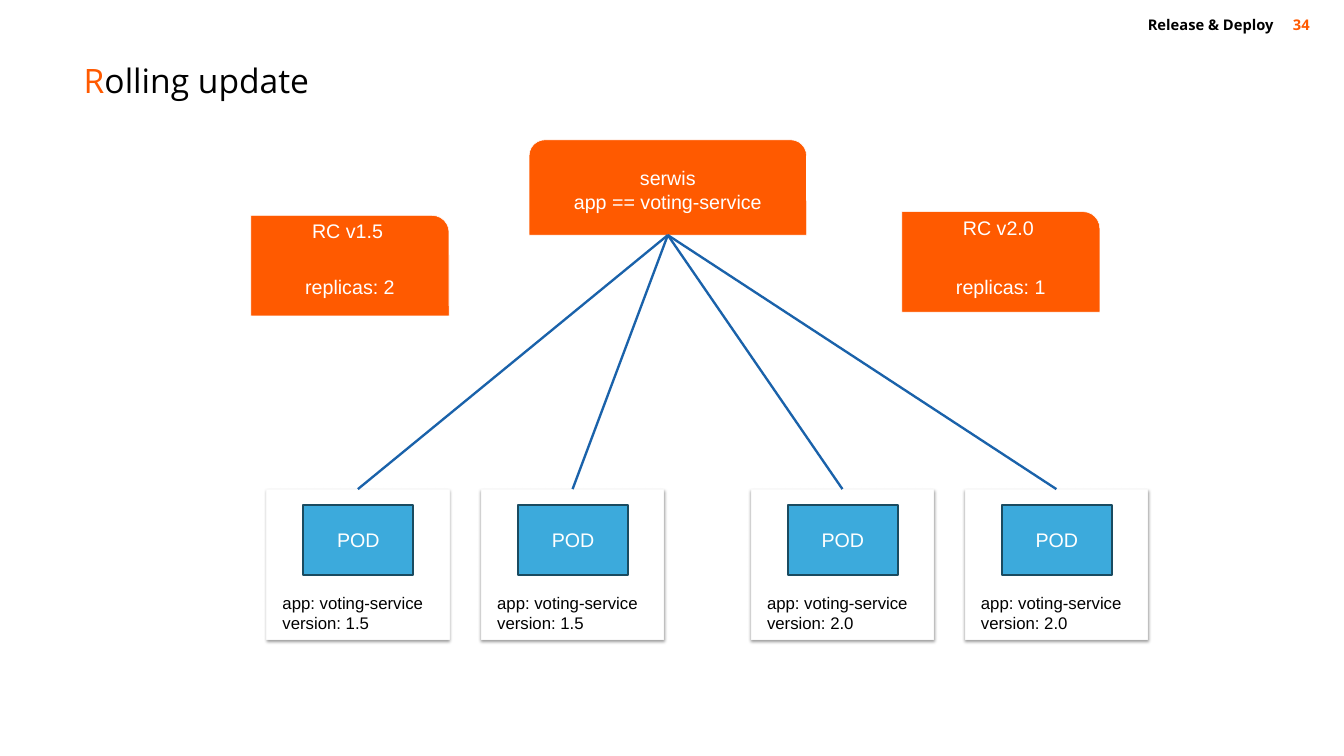
from lxml.etree import SubElement
from pptx import Presentation
from pptx.dml.color import RGBColor as RGB
from pptx.enum.shapes import MSO_CONNECTOR as LINE, MSO_SHAPE as FORM
from pptx.enum.text import MSO_ANCHOR as ANCHOR, MSO_AUTO_SIZE as AUTO, PP_ALIGN as ALIGN
from pptx.oxml import parse_xml
from pptx.oxml.ns import nsdecls, qn
from pptx.util import Inches, Pt

WIDE, HIGH = 17.78, 10
ORANGE = RGB(0xFF, 0x5A, 0x00)
WHITE = RGB(0xFF, 0xFF, 0xFF)
BLACK = RGB(0x00, 0x00, 0x00)
PALE = RGB(0xF9, 0xF9, 0xF9)
SKY = RGB(0x3C, 0xAA, 0xDC)
TEAL = RGB(0x1A, 0x4B, 0x60)
BLUE = RGB(0x1A, 0x62, 0xAA)

LABEL = dict(size=Pt(18.7), name="Arial", color=WHITE)
NOTE = dict(size=Pt(16), name="Arial", color=BLACK)
HEAD = dict(size=Pt(14), name="Open Sans", bold=True)
TITLE = dict(size=Pt(32), name="Open Sans", bold=False)

PODS = [(3.53, "1.5"), (6.37, "1.5"), (9.94, "2.0"), (12.77, "2.0")]
SETS = [((3.32, 2.85, 2.62, 1.33), "1.5", 2, 0.55),
        ((11.93, 2.8, 2.62, 1.33), "2.0", 1, 0.59)]
HUB = (7, 1.85, 3.67, 1.26)
SHADE = f"""<a:effectLst {nsdecls('a')}>
<a:outerShdw blurRad="{Pt(3.1)}" dist="{Pt(1.6)}" dir="5400000" rotWithShape="0">
<a:srgbClr val="000000"><a:alpha val="38000"/></a:srgbClr>
</a:outerShdw></a:effectLst>"""


def part(box, x, y, w, h):
    left, top, wide, high = box
    return left + x * wide, top + y * high, w * wide, h * high


def style(font, form):
    for key, value in form.items():
        if key == "color":
            font.color.rgb = value
        else:
            setattr(font, key, value)


def write(shape, lines, form, align=ALIGN.CENTER, anchor=ANCHOR.MIDDLE, pad=None):
    frame = shape.text_frame
    frame.word_wrap = True
    frame.auto_size = AUTO.NONE
    frame.vertical_anchor = anchor
    if pad is not None:
        for side in ("left", "right", "top", "bottom"):
            setattr(frame, f"margin_{side}", Inches(pad))
    for i, line in enumerate(lines):
        para = frame.add_paragraph() if i else frame.paragraphs[0]
        para.alignment = align
        for words, more in line if isinstance(line, list) else [(line, {})]:
            run = para.add_run()
            run.text = words
            style(run.font, form | more)


def block(host, form, box, fill, edge, width):
    shape = host.add_shape(form, *map(Inches, box))
    shape.shadow.inherit = False
    shape.fill.solid()
    shape.fill.fore_color.rgb = fill
    shape.line.color.rgb = edge
    shape.line.width = Pt(width)
    return shape


def label(host, box, *args, **more):
    write(host.add_textbox(*map(Inches, box)), *args, **more)


def header(slide, box):
    host = slide.shapes
    label(host, part(box, 0.95, 0.1, 0.03, 0.23), ["34"],
          HEAD | dict(color=ORANGE), align=ALIGN.RIGHT)
    label(host, part(box, 0.67, 0.1, 0.28, 0.23), ["Release & Deploy"],
          HEAD | dict(color=BLACK), align=ALIGN.RIGHT, pad=0.04)
    title = host.title
    spot = part(box, 0.06, 0.5, 0.88, 0.41)
    for key, value in zip(("left", "top", "width", "height"), spot):
        setattr(title, key, Inches(value))
    write(title, [[("R", dict(color=ORANGE)), ("olling update", dict(color=BLACK))]],
          TITLE, align=ALIGN.LEFT, pad=0.04)


def hub(slide, box):
    shape = block(slide.shapes, FORM.ROUND_2_SAME_RECTANGLE, box, ORANGE, WHITE, 0.5)
    write(shape, ["serwis", "app == voting-service"], LABEL)


def control(slide, box, version, count, row):
    host = slide.shapes
    shape = block(host, FORM.ROUND_1_RECTANGLE, box, ORANGE, WHITE, 0.5)
    write(shape, [f"RC v{version}"], LABEL, anchor=ANCHOR.TOP)
    label(host, part(box, 0.04, row, 0.92, 0.32), [f"replicas: {count}"], LABEL)


def pod(slide, box, version):
    host = slide.shapes.add_group_shape().shapes
    card = block(host, FORM.RECTANGLE, box, WHITE, PALE, 0.75)
    props = card.element.spPr
    props.replace(props.find(qn("a:effectLst")), parse_xml(SHADE))
    core = block(host, FORM.RECTANGLE, part(box, 0.2, 0.105, 0.605, 0.467), SKY, TEAL, 2)
    write(core, ["POD"], LABEL)
    label(host, part(box, 0.045, 0.663, 1, 0.32),
          ["app: voting-service", f"version: {version}"], NOTE,
          align=ALIGN.LEFT, anchor=ANCHOR.TOP)


def link(slide, box, goal):
    start = part(box, 0.5, 0, 0, 0)[:2]
    end = part(goal, 0.5, 1, 0, 0)[:2]
    wire = slide.shapes.add_connector(LINE.STRAIGHT, *map(Inches, start + end))
    wire.line.color.rgb = BLUE
    wire.line.width = Pt(2.25)
    SubElement(wire.element.spPr, qn("a:effectLst"))


def main():
    deck = Presentation()
    deck.slide_width, deck.slide_height = Inches(WIDE), Inches(HIGH)
    slide = deck.slides.add_slide(deck.slide_layouts[5])
    header(slide, (0, 0, WIDE, 0.15 * HIGH))
    hub(slide, HUB)
    for item in SETS:
        control(slide, *item)
    cards = [((left, 6.47, 2.41, 1.99), version) for left, version in PODS]
    for box, version in cards:
        pod(slide, box, version)
    for box, _ in cards:
        link(slide, box, HUB)
    deck.save("out.pptx")


if __name__ == "__main__":
    main()
